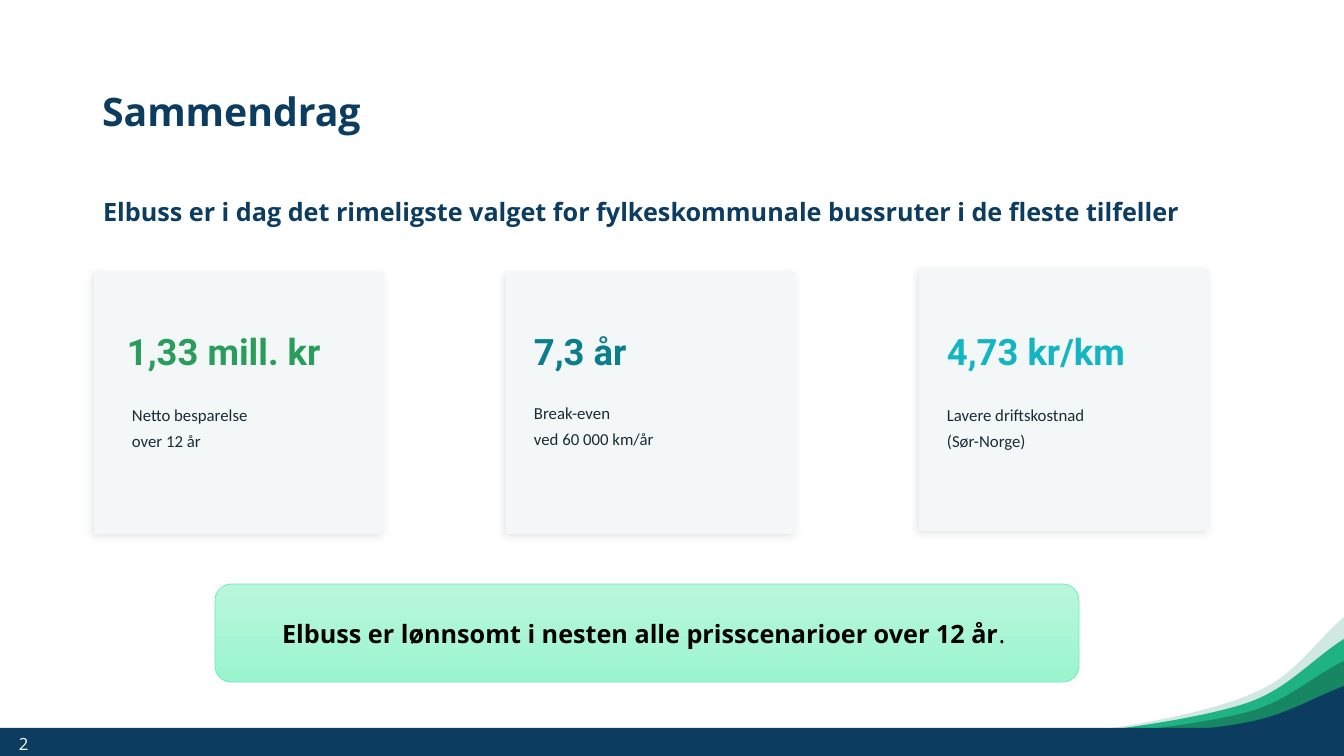
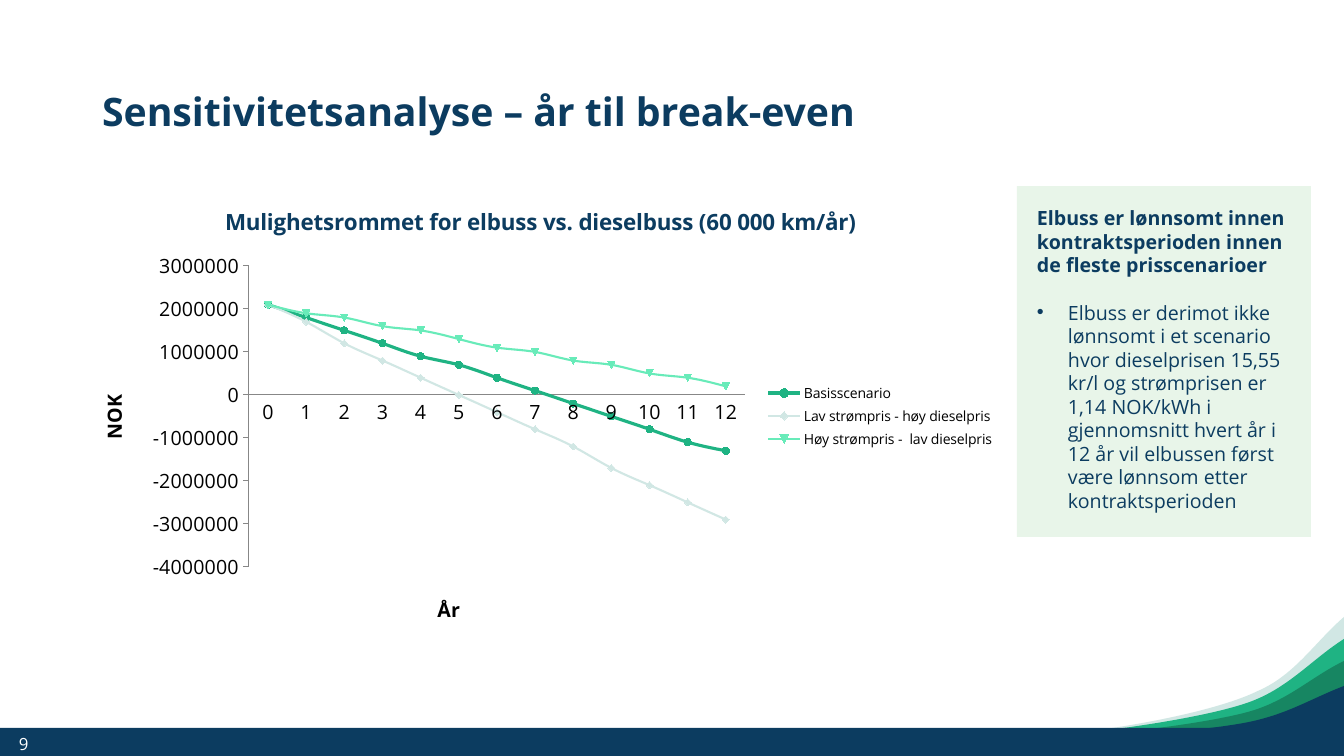
from lxml import etree
from pptx import Presentation
from pptx.chart.data import CategoryChartData
from pptx.dml.color import RGBColor
from pptx.enum.chart import XL_CHART_TYPE as CHART, XL_LEGEND_POSITION as LEGEND
from pptx.enum.chart import XL_MARKER_STYLE as MARKER, XL_TICK_MARK as TICK
from pptx.enum.shapes import MSO_SHAPE as SHAPE
from pptx.enum.text import MSO_ANCHOR as ANCHOR, MSO_AUTO_SIZE as AUTO, PP_ALIGN as ALIGN
from pptx.oxml import parse_xml
from pptx.oxml.ns import nsdecls, qn
from pptx.util import Emu, Pt

WIDTH, HEIGHT = 1344, 756
SCALE = 12192000 / WIDTH

NAVY = RGBColor(0x0C, 0x3C, 0x60)
WHITE = RGBColor(0xFF, 0xFF, 0xFF)
BLACK = RGBColor(0, 0, 0)
INK = RGBColor(0x1A, 0x2B, 0x38)
GREY = RGBColor(0x87, 0x87, 0x87)
CARD = RGBColor(0xF3, 0xF7, 0xF8)
PALE_GREEN = RGBColor(0xE8, 0xF5, 0xE9)
MIST = RGBColor(0xD1, 0xE7, 0xE4)
GREEN = RGBColor(0x1F, 0xB3, 0x83)
DARK_GREEN = RGBColor(0x17, 0x86, 0x62)
MINT = RGBColor(0x68, 0xEB, 0xB9)
GRADIENT = RGBColor(0xB9, 0xF6, 0xDC), RGBColor(0x9B, 0xF5, 0xCF)
LEAF = RGBColor(0x2A, 0x9D, 0x5C)
TEAL = RGBColor(0x0A, 0x7E, 0x8C)
CYAN = RGBColor(0x13, 0xB5, 0xC2)

# Each wave is a start point followed by three cubic curves.
WAVES = [
    (MIST, [(923, 746), (870, 743), (972, 747), (1027, 737), (1084, 735),
            (1207, 716), (1258, 691), (1295, 675), (1315, 642), (1344, 617)]),
    (GREEN, [(868, 748), (808, 746), (923, 749), (986, 741), (1050, 739),
             (1188, 723), (1247, 703), (1288, 689), (1311, 660), (1344, 639)]),
    (DARK_GREEN, [(869, 748), (809, 746), (924, 748), (987, 742), (1051, 741),
                  (1189, 728), (1248, 712), (1288, 701), (1311, 677), (1344, 661)]),
    (NAVY, [(853, 749), (791, 747), (910, 749), (975, 744), (1040, 743),
            (1184, 734), (1244, 723), (1287, 715), (1310, 699), (1344, 686)]),
]


def px(n):
    return Emu(round(n * SCALE))


def bend(sp, curves):
    """Turn each leading group of three line segments into one cubic curve."""
    lines = list(sp.element.iter(qn('a:lnTo')))
    for i in range(0, 3 * curves, 3):
        first, *others = lines[i:i + 3]
        cubic = etree.Element(qn('a:cubicBezTo'))
        first.addprevious(cubic)
        for line in (first, *others):
            cubic.append(line[0])
            line.getparent().remove(line)


def set_layout(el, size, x, y, w=None, h=None):
    """Place a chart part by px from the corner of a chart of the given size."""
    layout = el.find(qn('c:layout'))
    if layout is None:
        layout = etree.Element(qn('c:layout'))
        el.insert(0 if el.find(qn('c:tx')) is None else 1, layout)
    manual = etree.SubElement(layout, qn('c:manualLayout'))
    parts = [('xMode', 'edge'), ('yMode', 'edge'), ('x', x / size[0]), ('y', y / size[1])]
    if w:
        parts = [('layoutTarget', 'inner'), *parts, ('w', w / size[0]), ('h', h / size[1])]
    for tag, val in parts:
        etree.SubElement(manual, qn('c:' + tag)).set('val', str(val))


class Deck:
    font = 'Open Sans'

    def __init__(self):
        self.prs = Presentation()
        self.prs.slide_width, self.prs.slide_height = px(WIDTH), px(HEIGHT)
        self.s = None

    def slide(self, layout, title, number):
        first = self.s is None
        self.s = self.prs.slides.add_slide(self.prs.slide_layouts[layout])
        if first:
            self.master_bands()
        self.placeholder(self.s.shapes.title, (92, 41, 1159, 146), title, 28, ANCHOR.MIDDLE)
        self.text((9, 724, 57, 40), [number], 12, WHITE, inset=None)

    def master_bands(self):
        """Draw the waves and the footer band, then move them to the master."""
        bands = []
        for color, pts in WAVES:
            start, *rest = [(px(x), px(y)) for x, y in pts]
            fb = self.s.shapes.build_freeform(*start, scale=1.0)
            fb.add_line_segments(rest + [(px(WIDTH), start[1])], close=True)
            wave = self.paint(fb.convert_to_shape(), color)
            bend(wave, len(rest) // 3)
            bands.append(wave)
        bands.append(self.box((0, 728, WIDTH, 28), NAVY))
        for i, sp in enumerate(bands):
            sp.element.nvSpPr.cNvPr.set('id', str(100 + i))
            self.prs.slide_master.shapes.element.insert(2 + i, sp.element)

    def paint(self, sp, color):
        sp.shadow.inherit = False
        sp.fill.solid()
        sp.fill.fore_color.rgb = color
        sp.line.fill.background()
        return sp

    def box(self, at, color, shape=SHAPE.RECTANGLE):
        return self.paint(self.s.shapes.add_shape(shape, *map(px, at)), color)

    def card(self, at):
        sp = self.box(at, CARD)
        sp.element.spPr.find(qn('a:effectLst')).append(parse_xml(
            f'<a:outerShdw {nsdecls("a")} blurRad="76200" dist="25400" dir="8100000" '
            'rotWithShape="0"><a:srgbClr val="000000"><a:alpha val="10000"/>'
            '</a:srgbClr></a:outerShdw>'))

    def run(self, p, text, size, color=NAVY, bold=False, font=None):
        r = p.add_run()
        r.text = text
        r.font.name, r.font.size, r.font.bold = font or self.font, Pt(size), bold
        r.font.color.rgb = color

    def frame(self, sp, anchor, inset=None):
        tf = sp.text_frame
        tf.word_wrap, tf.auto_size, tf.vertical_anchor = True, AUTO.NONE, anchor
        if inset is not None:
            tf.margin_left = tf.margin_right = tf.margin_top = tf.margin_bottom = px(inset)
        return tf

    def placeholder(self, sp, at, text, size, anchor):
        sp.left, sp.top, sp.width, sp.height = map(px, at)
        p = self.frame(sp, anchor).paragraphs[0]
        p.alignment, p.line_spacing, p.space_before = ALIGN.LEFT, 0.9, Pt(0)
        pPr = p._p.get_or_add_pPr()
        pPr.set('marL', '0')
        pPr.set('indent', '0')
        etree.SubElement(pPr, qn('a:buNone'))
        self.run(p, text, size, bold=True)

    def lead(self, text):
        self.placeholder(self.s.placeholders[1], (93, 195, 1159, 70), text, 18, ANCHOR.TOP)

    def text(self, at, lines, size, color, bold=False, font=None, spacing=1.0, inset=0):
        tf = self.frame(self.s.shapes.add_textbox(*map(px, at)), ANCHOR.MIDDLE, inset)
        for i, line in enumerate(lines):
            p = tf.paragraphs[0] if i == 0 else tf.add_paragraph()
            p.line_spacing = spacing
            self.run(p, line, size, color, bold, font)

    def callout(self, at, text, ending):
        sp = self.box(at, MINT, SHAPE.ROUNDED_RECTANGLE)
        sp.fill.gradient()
        sp.fill.gradient_angle = 270
        for stop, color in zip(sp.fill.gradient_stops, GRADIENT):
            stop.color.rgb = color
        sp.line.color.rgb, sp.line.width = MINT, Pt(0.5)
        p = self.frame(sp, ANCHOR.MIDDLE).paragraphs[0]
        p.alignment = ALIGN.CENTER
        self.run(p, text, 18, BLACK, True)
        self.run(p, ending, 18, BLACK)

    def side_note(self, at, heading, bullet):
        tf = self.frame(self.box(at, PALE_GREEN), ANCHOR.TOP, 20)
        head, item = tf.paragraphs[0], tf.add_paragraph()
        for p in (head, item):
            p.alignment, p.line_spacing = ALIGN.LEFT, 1.0
        item.space_before = Pt(17)
        pPr = item._p.get_or_add_pPr()
        pPr.set('marL', str(px(31)))
        pPr.set('indent', str(-px(31)))
        etree.SubElement(pPr, qn('a:buFont')).set('typeface', 'Arial')
        etree.SubElement(pPr, qn('a:buChar')).set('char', '•')
        self.run(head, heading, 14, bold=True)
        self.run(item, bullet, 14)

    def chart_title(self, title, text, points, color, size, place):
        self.run(title.text_frame.paragraphs[0], text, points, color, True)
        set_layout(title.element, size, *place)

    def line_chart(self, at, title, axis_titles, cats, series):
        data = CategoryChartData(number_format='General')
        data.categories = cats
        for name, vals, *_ in series:
            data.add_series(name, vals)
        chart = self.s.shapes.add_chart(CHART.LINE_MARKERS, *map(px, at), data).chart
        size = at[2:]
        chart.font.name, chart.font.size = self.font, Pt(10)
        chart.font.color.rgb = BLACK
        chart.has_title = True
        self.chart_title(chart.chart_title, title, 16, NAVY, size, (143, 15))
        chart.has_legend = True
        chart.legend.position, chart.legend.include_in_layout = LEGEND.RIGHT, False
        set_layout(chart.element.find('.//' + qn('c:plotArea')), size, 171, 80, 496, 301)

        cat, val = chart.category_axis, chart.value_axis
        val.minimum_scale, val.maximum_scale, val.major_unit = -4000000, 3000000, 1000000
        places = (356, 405), (17, 205)
        for axis, text, place, tick in zip((cat, val), axis_titles, places,
                                           (TICK.NONE, TICK.OUTSIDE)):
            self.chart_title(axis.axis_title, text, 14, BLACK, size, place)
            axis.has_major_gridlines = False
            axis.major_tick_mark, axis.minor_tick_mark = tick, TICK.NONE
            axis.tick_labels.font.size = Pt(14)
            axis.format.line.color.rgb = GREY

        plot = chart.plots[0]
        plot.vary_by_categories = False
        for ser, (_, _, color, width, marker) in zip(plot.series, series):
            ser.smooth = True
            ser.format.line.color.rgb, ser.format.line.width = color, Pt(width)
            if marker:
                ser.marker.style = marker
            ser.marker.size = 5
            ser.marker.format.fill.solid()
            ser.marker.format.fill.fore_color.rgb = color
            ser.marker.format.line.color.rgb = color


def summary(deck):
    deck.slide(1, 'Sammendrag', '2')
    deck.lead('Elbuss er i dag det rimeligste valget for fylkeskommunale bussruter '
              'i de fleste tilfeller')
    cards = [
        (94, 272, 127, 132, 382, LEAF, '1,33 mill. kr', ['Netto besparelse', 'over 12 år']),
        (506, 272, 534, 534, 380, TEAL, '7,3 år', ['Break-even', 'ved 60 000 km/år']),
        (919, 269, 947, 947, 382, CYAN, '4,73 kr/km', ['Lavere driftskostnad', '(Sør-Norge)']),
    ]
    for x, y, value_x, label_x, label_y, color, value, label in cards:
        deck.card((x, y, 290, 262))
        deck.text((value_x, 322, 262, 58), [value], 26, color, True, 'Roboto')
        deck.text((label_x, label_y, 262, 86), label, 12, INK, font='Calibri', spacing=1.3)
    deck.callout((215, 584, 864, 98),
                 'Elbuss er lønnsomt i nesten alle prisscenarioer over 12 år', '. ')


def sensitivity(deck):
    deck.slide(5, 'Sensitivitetsanalyse – år til break-even', '9')
    base = [2100000, 1800000, 1500000, 1200000, 900000, 700000, 400000, 100000,
            -200000, -500000, -800000, -1100000, -1300000]
    low = [2100000, 1700000, 1200000, 800000, 400000, 0, -400000, -800000,
           -1200000, -1700000, -2100000, -2500000, -2900000]
    high = [2100000, 1900000, 1800000, 1600000, 1500000, 1300000, 1100000, 1000000,
            800000, 700000, 500000, 400000, 200000]
    deck.line_chart(
        (78, 186, 927, 460), 'Mulighetsrommet for elbuss vs. dieselbuss (60 000 km/år)',
        ('År', 'NOK'), [str(year) for year in range(13)],
        [('Basisscenario', base, GREEN, 2.25, MARKER.CIRCLE),
         ('Lav strømpris - høy dieselpris', low, MIST, 1.5, None),
         ('Høy strømpris -  lav dieselpris', high, MINT, 1.5, None)])
    deck.side_note(
        (1017, 186, 294, 351),
        'Elbuss er lønnsomt innen kontraktsperioden innen de fleste prisscenarioer',
        'Elbuss er derimot ikke lønnsomt i et scenario hvor dieselprisen 15,55 kr/l og '
        'strømprisen er 1,14 NOK/kWh i gjennomsnitt hvert år i 12 år vil elbussen først '
        'være lønnsom etter kontraktsperioden')


def main():
    deck = Deck()
    summary(deck)
    sensitivity(deck)
    deck.prs.save("out.pptx")


if __name__ == "__main__":
    main()
